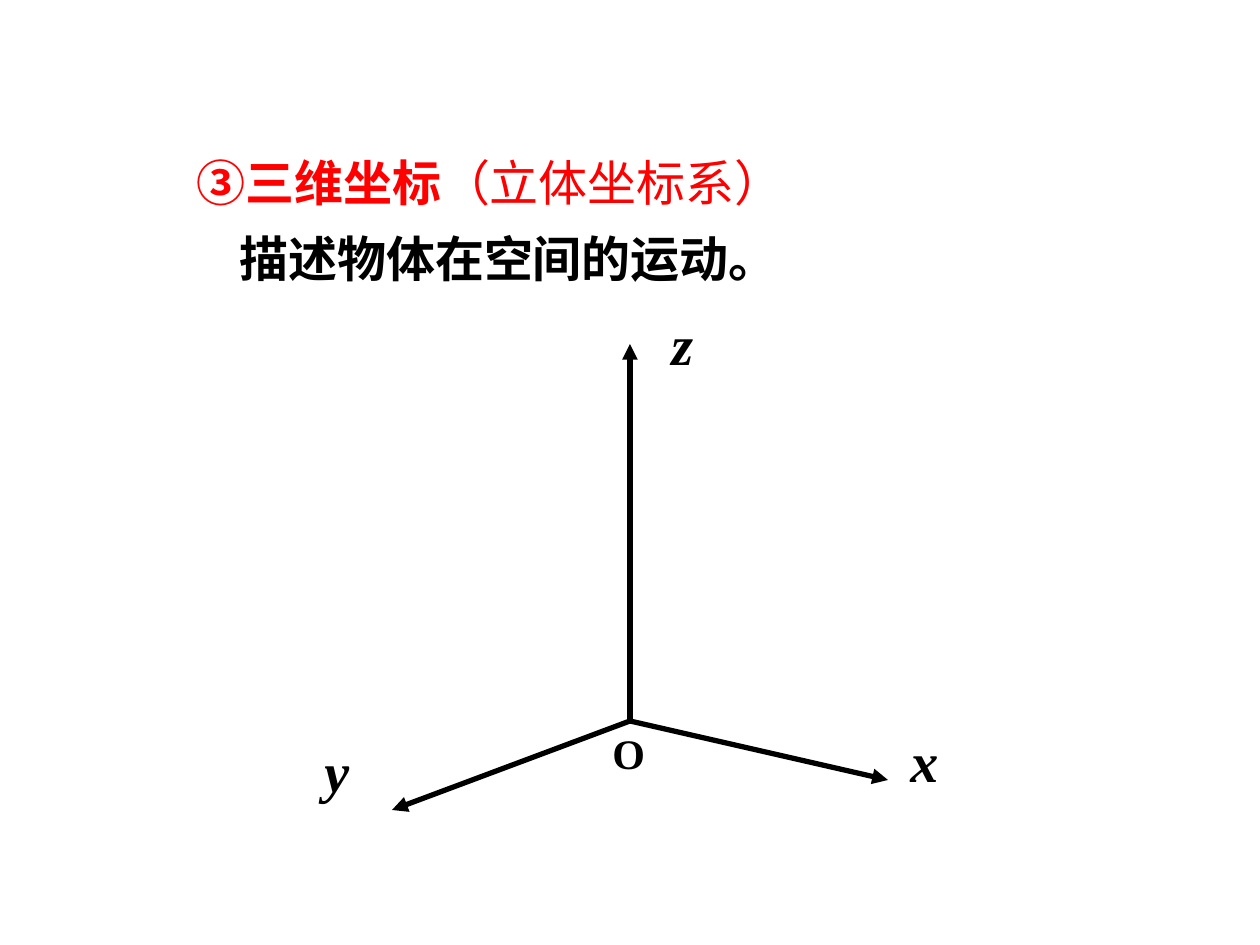
from pptx import Presentation
from pptx.dml.color import RGBColor
from pptx.enum.shapes import MSO_CONNECTOR
from pptx.enum.text import MSO_ANCHOR
from pptx.oxml.ns import qn
from pptx.util import Emu, Pt
from lxml.etree import SubElement

PX = 914400 // 126
FONT = "Times New Roman"
BLACK = "000000"
RED = "FF0000"
ORIGIN = (630, 721)
AXIS_ENDS = [(630, 344), (888, 780), (392, 810)]
LABELS = [
    ("x", 898, 721, 110, 79, 32, True),
    ("y", 312, 731, 79, 79, 32, True),
    ("z", 659, 304, 110, 79, 32, True),
    ("O", 600, 721, 149, 63, 24, False),
]


def px(n):
    return Emu(n * PX)


def color(value):
    return RGBColor.from_string(value)


def set_font(p, size, fill, italic=False):
    p.font.name = FONT
    p.font.size = Pt(size)
    p.font.bold = True
    p.font.italic = italic
    p.font.color.rgb = color(fill)


def add_text_frame(slide, x, y, w, h):
    tf = slide.shapes.add_textbox(px(x), px(y), px(w), px(h)).text_frame
    tf.word_wrap = True
    return tf


def add_heading(slide):
    tf = add_text_frame(slide, 184, 135, 969, 178)
    p = tf.paragraphs[0]
    p.line_spacing = 1.2
    p.add_run().text = "③三维坐标"
    r = p.add_run()
    r.text = "（立体坐标系）"
    set_font(p, 28, RED)
    r.font.bold = False

    p = tf.add_paragraph()
    p.text = "描述物体在空间的运动。"
    p.line_spacing = 1.2
    p.space_before = Pt(3)
    pPr = p._p.get_or_add_pPr()
    pPr.set("marL", "0")
    pPr.set("indent", str(px(43)))
    set_font(p, 28, BLACK)


def add_axis(slide, end):
    line = slide.shapes.add_connector(
        MSO_CONNECTOR.STRAIGHT, *map(px, ORIGIN), *map(px, end))
    line.line.color.rgb = color(BLACK)
    line.line.width = Pt(3)
    SubElement(line.line._get_or_add_ln(), qn("a:tailEnd"), type="triangle")
    SubElement(line._element.spPr, qn("a:effectLst"))


def add_label(slide, text, x, y, w, h, size, italic):
    tf = add_text_frame(slide, x, y, w, h)
    tf.vertical_anchor = MSO_ANCHOR.BOTTOM
    p = tf.paragraphs[0]
    p.text = text
    set_font(p, size, BLACK, italic)


def main():
    prs = Presentation()
    prs.slide_width, prs.slide_height = px(1260), px(945)
    slide = prs.slides.add_slide(prs.slide_layouts[6])
    add_heading(slide)
    for end in AXIS_ENDS:
        add_axis(slide, end)
    for label in LABELS:
        add_label(slide, *label)
    prs.save("out.pptx")


if __name__ == "__main__":
    main()
